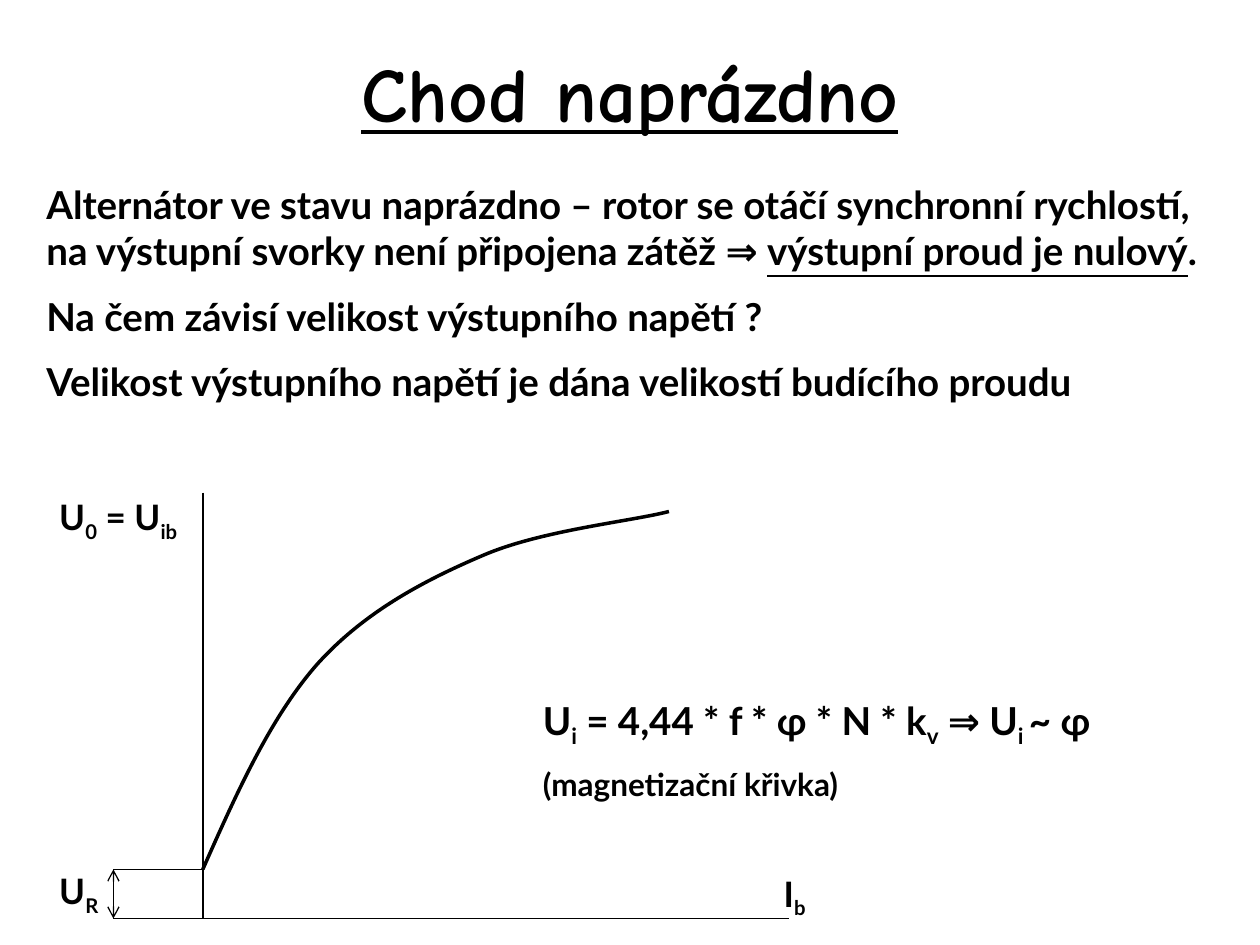
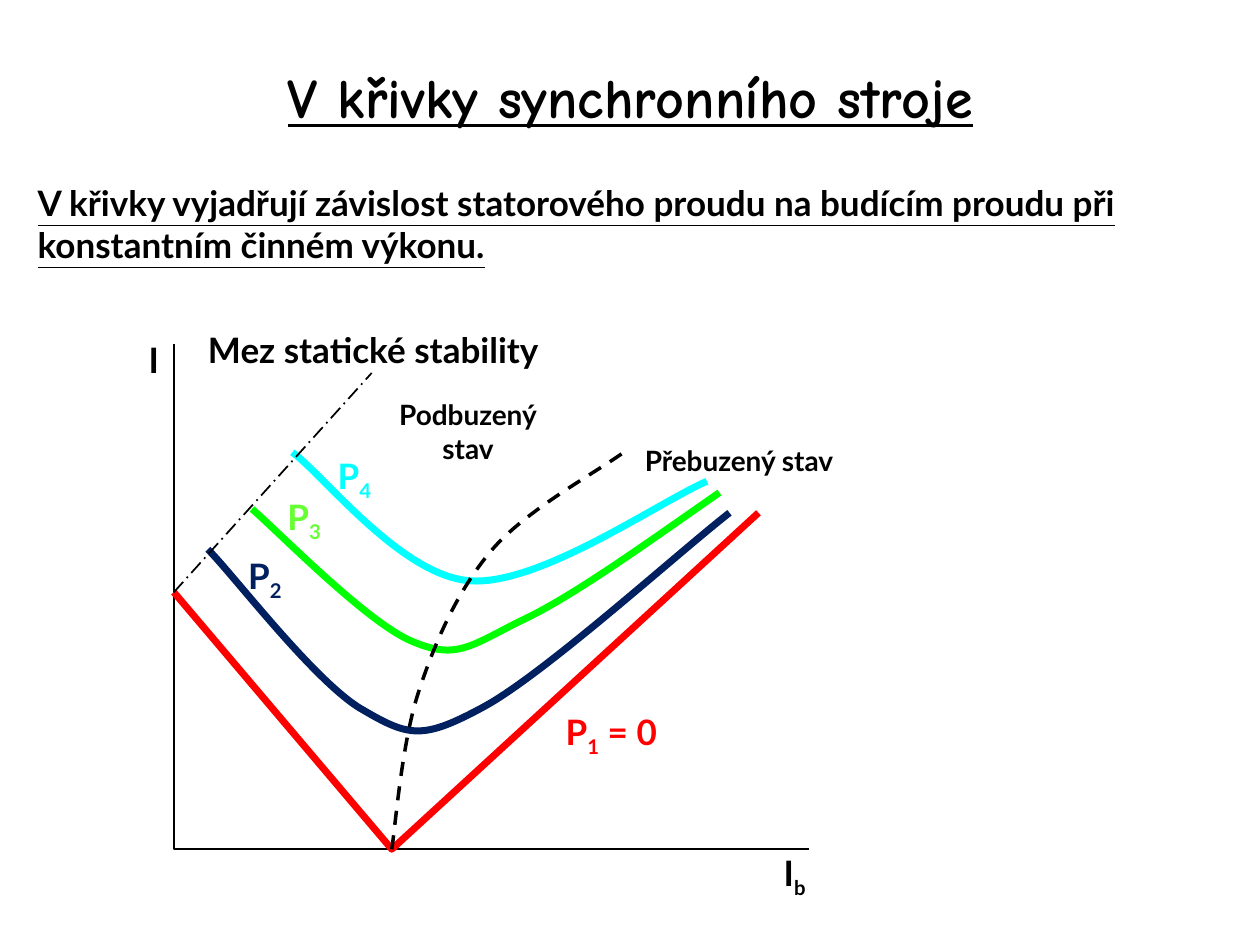
from pptx import Presentation
from pptx import util as u
from pptx.dml.color import RGBColor
from pptx.enum import dml, text
from pptx.oxml.ns import qn
from lxml import etree

# Shared look
BLACK = RGBColor(0x00, 0x00, 0x00)
RED = RGBColor(0xFF, 0x00, 0x00)
NAVY = RGBColor(0x00, 0x20, 0x60)
GREEN = RGBColor(0x00, 0xFF, 0x00)
LIGHT_GREEN = RGBColor(0x66, 0xFF, 0x33)
CYAN = RGBColor(0x00, 0xFF, 0xFF)
TITLE_FONT = "Comic Neue"
BODY_FONT = "Lato"
SLIDE_W, SLIDE_H = u.Inches(10), u.Inches(7.5)
CELL = SLIDE_W / 100  # the grid has 100 columns and 75 rows
LABEL_INSET = u.Inches(0.04)
TITLE_ONLY = 5


def grid(*cells):
    return [u.Emu(round(cell * CELL)) for cell in cells]


def set_font(font, name, size, color=BLACK):
    font.name, font.size, font.bold = name, u.Pt(size), True
    font.color.rgb = color


def add_titled_slide(deck, title, size, box):
    slide = deck.slides.add_slide(deck.slide_layouts[TITLE_ONLY])
    heading = slide.shapes.title
    heading.left, heading.top, heading.width, heading.height = grid(*box)
    frame = heading.text_frame
    frame.text = title
    frame.auto_size = text.MSO_AUTO_SIZE.NONE
    frame.vertical_anchor = text.MSO_ANCHOR.MIDDLE
    frame.paragraphs[0].alignment = text.PP_ALIGN.CENTER
    run = frame.paragraphs[0].runs[0]
    set_font(run.font, TITLE_FONT, size)
    run.font.underline = True
    return slide


def underline(run):
    run.font.underline = True


def subscript(run):
    run._r.get_or_add_rPr().set("baseline", "-25000")


def write(paragraph, content, size, color=BLACK, mark=subscript):
    """Write the content; every second part between bars gets the mark."""
    for index, part in enumerate(content.split("|")):
        if part:
            run = paragraph.add_run()
            run.text = part
            set_font(run.font, BODY_FONT, size, color)
            if index % 2:
                mark(run)


def add_body(slide, box, lines, mark):
    frame = slide.shapes.add_textbox(*grid(*box)).text_frame
    frame.word_wrap = True
    for index, (content, size) in enumerate(lines):
        paragraph = frame.add_paragraph() if index else frame.paragraphs[0]
        if index:
            paragraph.space_before = u.Pt(size / 2)
        write(paragraph, content, size, mark=mark)


def add_label(slide, box, *lines, color=BLACK, size=20, wrap=False,
              align=text.PP_ALIGN.LEFT):
    frame = slide.shapes.add_textbox(*grid(*box)).text_frame
    frame.word_wrap = wrap
    frame.vertical_anchor = text.MSO_ANCHOR.MIDDLE
    frame.margin_left = frame.margin_right = LABEL_INSET
    frame.margin_top = frame.margin_bottom = LABEL_INSET
    for index, content in enumerate(lines):
        paragraph = frame.add_paragraph() if index else frame.paragraphs[0]
        paragraph.alignment = align
        write(paragraph, content, size, color)


def style_line(line, color, width, dash=None):
    line.color.rgb = color
    line.width = u.Pt(width)
    if dash is not None:
        line.dash_style = dash


def add_polyline(slide, points, color=BLACK, width=1, dash=None):
    start, *rest = [grid(*point) for point in points]
    builder = slide.shapes.build_freeform(*start)
    builder.add_line_segments(rest, close=False)
    outline = builder.convert_to_shape()
    outline.shadow.inherit = False
    outline.fill.background()
    style_line(outline.line, color, width, dash)
    return outline


def add_curve(slide, points, color=BLACK, width=4, dash=None):
    """Points are a start, then two controls and an end for each arc."""
    outline = add_polyline(slide, points, color, width, dash)
    track = outline._element.find(".//" + qn("a:path"))
    steps = track.findall(qn("a:lnTo"))
    for first in range(0, len(steps), 3):
        arc = etree.SubElement(track, qn("a:cubicBezTo"))
        for step in steps[first:first + 3]:
            arc.append(step[0])
            track.remove(step)


def add_line(slide, start, end, width=0.75, dash=None, arrows=False):
    connector = slide.shapes.add_connector(1, *grid(*start, *end))
    style_line(connector.line, BLACK, width, dash)
    properties = connector._element.spPr
    if arrows:
        for tip in ("a:headEnd", "a:tailEnd"):
            etree.SubElement(properties.find(qn("a:ln")), qn(tip), type="arrow")
    etree.SubElement(properties, qn("a:effectLst"))


def build_no_load(deck):
    slide = add_titled_slide(deck, "Chod naprázdno", 44, (5, 3, 90, 8.5))
    add_body(slide, (2.7, 13.9, 96.1, 23), [
        ("Alternátor ve stavu naprázdno – rotor se otáčí synchronní rychlostí, "
         "na výstupní svorky není připojena zátěž ⇒ |výstupní proud je nulový|.", 22),
        ("Na čem závisí velikost výstupního napětí ?", 22),
        ("Velikost výstupního napětí je dána velikostí budícího proudu", 22),
    ], underline)

    # Axes and magnetization curve
    axis, base, remanence = 16.1, 72.9, 69
    add_polyline(slide, [(axis, 39.1), (axis, base), (62.6, base)])
    add_label(slide, (4.3, 39.1, 11.8, 4.2), "U|0| = U|ib")
    add_label(slide, (61.8, 69, 3.3, 4.2), "I|b")
    add_curve(slide, [(axis, remanence),
                      (18.8, 62.9), (21.5, 56.9), (25.2, 52.7),
                      (28.9, 48.6), (33.6, 46.1), (38.3, 44.1),
                      (42.9, 42.1), (50, 41.4), (53.1, 40.6)], width=2)

    # Remanent voltage dimension
    for row in (remanence, base):
        add_line(slide, (axis, row), (9, row))
    add_line(slide, (9, remanence), (9, base), arrows=True)
    add_label(slide, (4.3, 68.8, 4.2, 4.2), "U|R")

    # Induced voltage formula
    add_body(slide, (42.1, 54.8, 55.9, 9.2), [
        ("U|i| = 4,44 * f * φ * N * k|v| ⇒ U|i |~ φ", 22),
        ("(magnetizační křivka)", 18),
    ], subscript)


def build_v_curves(deck):
    slide = add_titled_slide(deck, "V křivky synchronního stroje", 32,
                             (2, 3, 96.1, 9.3))
    add_body(slide, (2, 13.9, 96.9, 7.7), [
        ("|V křivky vyjadřují závislost statorového proudu na budícím proudu "
         "při konstantním činném výkonu.", 20),
    ], underline)

    # Axes
    axis, base = 13.8, 67.4
    add_polyline(slide, [(axis, 27.3), (axis, base), (64.2, base)])
    add_label(slide, (61.8, 67.4, 3.3, 4.2), "I|b")
    add_label(slide, (11.4, 26.5, 2.1, 4.1), "I")

    # Curves of constant power, from zero upwards
    valley = (31.1, base)
    add_polyline(slide, [(axis, 47), valley, (60.2, 40.7)], RED, 4)
    power_curves = [
        (NAVY, [(16.5, 43.6), (18.6, 45.7), (25.2, 54.4), (28.9, 56.4),
                (32.5, 58.5), (33.6, 58.7), (38.4, 56.1),
                (43.2, 53.5), (53.8, 43.9), (57.9, 40.7)]),
        (GREEN, [(20, 40.4), (22.1, 42.2), (29.1, 49.4), (32.7, 50.9),
                 (36.2, 52.4), (37.3, 51.3), (41.3, 49.3),
                 (45.4, 47.4), (51.2, 43.2), (57.1, 39.1)]),
        (CYAN, [(23.2, 35.9), (25.6, 37.6), (31.8, 45.7), (37.3, 46.1),
                (42.8, 46.5), (52.2, 39.9), (56.1, 38.2)]),
    ]
    for color, points in power_curves:
        add_curve(slide, points, color)
    power_labels = [
        ("P|4", CYAN, 26.4, 35.9, 3.8),
        ("P|3", LIGHT_GREEN, 22.4, 39.1, 3.8),
        ("P|2", NAVY, 19.3, 43.8, 3.8),
        ("P|1| = 0", RED, 44.5, 56.2, 9.6),
    ]
    for content, color, column, row, width in power_labels:
        add_label(slide, (column, row, width, 4.2), content, color=color)

    # Stability limit and the border between the two states
    add_line(slide, (axis, 47), (29.5, 29.6), 1,
             dml.MSO_LINE.LONG_DASH_DOT)
    add_label(slide, (16.1, 25.7, 30.2, 4.1), "Mez statické stability")
    add_curve(slide, [valley, (31.4, 65.4), (31.9, 59), (33.2, 55),
                      (34.5, 51), (36.3, 46.9), (39, 43.7),
                      (41.7, 40.5), (47.3, 37.5), (49.5, 35.9)],
              width=2, dash=dml.MSO_LINE.DASH)
    center = text.PP_ALIGN.CENTER
    add_label(slide, (30.6, 31.2, 13.1, 6.1), "Podbuzený", "stav",
              size=16, align=center)
    add_label(slide, (48.4, 34.8, 20.5, 3.5), "Přebuzený stav",
              size=16, wrap=True, align=center)


def main():
    deck = Presentation()
    deck.slide_width, deck.slide_height = SLIDE_W, SLIDE_H
    build_no_load(deck)
    build_v_curves(deck)
    deck.save("out.pptx")


if __name__ == "__main__":
    main()
